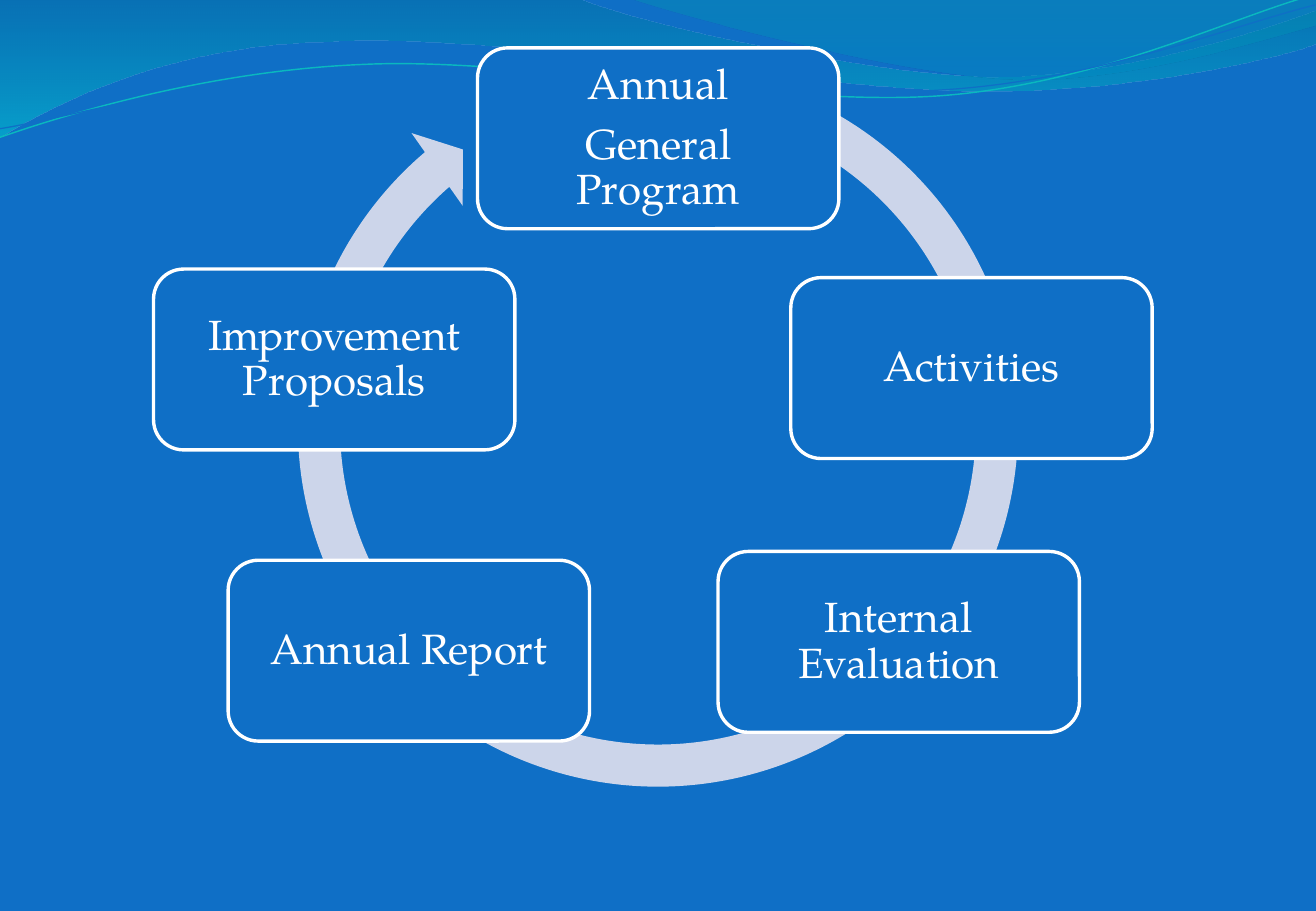
from dataclasses import dataclass

from lxml.etree import SubElement
from pptx import Presentation
from pptx.dml.color import RGBColor
from pptx.enum.shapes import MSO_SHAPE
from pptx.enum.text import MSO_ANCHOR, PP_ALIGN
from pptx.oxml.ns import qn
from pptx.util import Pt

# Content: paragraphs, left, top of each step in the cycle
STEPS = [
    (["Annual", "General Program"], 283, 28.4),
    (["Internal Evaluation"], 425.6, 326.9),
    (["Improvement Proposals"], 91, 159.5),
    (["Activities"], 468.7, 164.6),
    (["Annual Report"], 135.2, 332.1),
]
BOX = (214.2, 107.2)
RING = (162.7, 25.6, 454.6, 454.6)
BEND = (5.5, 330.7, 13760.8, 17395.2, 5.8)  # arrow adjustments, percent

# Waves: start point, then lines (one point) or curves (three points)
# Gradient stops: position, colour, opacity in percent
WAVES = [
    ([[(0, 0)], [(343.4, -0.7)],
      [(370.8, 12.2), (517.7, 45.4), (591.8, 45.4)],
      [(665.3, 45.4), (747.4, 18.7), (779.8, 6.5)],
      [(780.5, 25.9)],
      [(766.8, 31.7), (678.2, 54.7), (581.8, 54)],
      [(485.3, 54), (298.1, 20.2), (200.9, 24.5)],
      [(100.8, 25.9), (36, 59.8), (-0.7, 81.4)]],
     [(0, "0074A1", 45), (1, "00C6CF", 55)]),
    ([[(373.7, -0.7)],
      [(397.4, 7.9), (532.1, 44.6), (599.8, 46.8)],
      [(667.4, 49.7), (750.2, 23), (779.8, 15.1)],
      [(779.8, 0)]],
     [(0, "00A1A9", 30), (0.8, "008BBF", 45)]),
]
CURVES = [
    ([[(0, 81.4)],
      [(37.4, 68.4), (123.1, 41.8), (216, 38.2)],
      [(308.2, 33.8), (462.2, 63.4), (555.8, 56.9)],
      [(649.4, 50.4), (732.2, 9.4), (778.3, -2.9)]], "0AB8BF", 0.85),
    ([[(0, 76.3)],
      [(36.7, 70.6), (127.4, 44.6), (221, 41)],
      [(313.9, 37.4), (465.8, 59.8), (558.7, 53.3)],
      [(652.3, 47.5), (734.4, 13.7), (779.8, 2.9)]], "0F6FC6", 0.75),
]


@dataclass(frozen=True)
class Theme:
    back: str = "0F6FC6"
    ring: str = "CCD5EA"
    ink: str = "FFFFFF"
    font: str = "TeX Gyre Pagella"
    size: float = 25
    edge: float = 2
    pad: float = 7.5
    gap: float = 8.75


THEME = Theme()


def rgb(code):
    return RGBColor.from_string(code)


def paint(shape, fill=None, line=None, width=1):
    shape.shadow.inherit = False
    if fill:
        shape.fill.solid()
        shape.fill.fore_color.rgb = rgb(fill)
    else:
        shape.fill.background()
    if line:
        shape.line.color.rgb = rgb(line)
        shape.line.width = Pt(width)
    else:
        shape.line.fill.background()


def blend(shape, stops):
    shape.fill.gradient()
    shape.fill.gradient_angle = 270
    for stop, (place, code, _) in zip(shape.fill.gradient_stops, stops):
        stop.position = place
        stop.color.rgb = rgb(code)
    tints = shape.element.spPr.iter(qn("a:srgbClr"))
    for tint, (_, _, share) in zip(list(tints), stops):
        SubElement(tint, qn("a:alpha")).set("val", str(share * 1000))


def draw(shapes, parts, close):
    """Draw an outline; each part of three points becomes a cubic curve."""
    dots = [(Pt(x), Pt(y)) for part in parts for x, y in part]
    pen = shapes.build_freeform(*dots[0])
    pen.add_line_segments(dots[1:], close=close)
    shape = pen.convert_to_shape()
    route = next(shape.element.iter(qn("a:path")))
    lines = iter(route.findall(qn("a:lnTo")))
    for part in parts[1:]:
        legs = [next(lines) for _ in part]
        if len(legs) == 3:
            curve = SubElement(route, qn("a:cubicBezTo"))
            legs[0].addprevious(curve)
            for leg in legs:
                curve.append(leg[0])
                route.remove(leg)
    return shape


def write(shape, lines, font, size, color, pad, gap):
    frame = shape.text_frame
    frame.word_wrap = True
    frame.vertical_anchor = MSO_ANCHOR.MIDDLE
    frame.margin_left = frame.margin_right = Pt(pad)
    frame.margin_top = frame.margin_bottom = Pt(pad)
    for n, line in enumerate(lines):
        para = frame.add_paragraph() if n else frame.paragraphs[0]
        para.alignment = PP_ALIGN.CENTER
        para.line_spacing = 0.9
        para.space_after = Pt(gap)
        run = para.add_run()
        run.text = line
        run.font.name = font
        run.font.size = Pt(size)
        run.font.color.rgb = rgb(color)


def main():
    deck = Presentation()
    deck.slide_width, deck.slide_height = Pt(780), Pt(540)
    slide = deck.slides.add_slide(deck.slide_layouts[6])
    slide.background.fill.solid()
    slide.background.fill.fore_color.rgb = rgb(THEME.back)
    shapes = slide.shapes

    # Waves along the top
    for parts, stops in WAVES:
        wave = draw(shapes, parts, True)
        paint(wave)
        blend(wave, stops)
    for parts, color, width in CURVES:
        paint(draw(shapes, parts, False), line=color, width=width)

    # Ring arrow
    ring = shapes.add_shape(MSO_SHAPE.CIRCULAR_ARROW, *map(Pt, RING))
    for n, bend in enumerate(BEND):
        ring.adjustments[n] = bend / 100
    paint(ring, THEME.ring)

    # Steps of the cycle
    for lines, left, top in STEPS:
        box = shapes.add_shape(MSO_SHAPE.ROUNDED_RECTANGLE,
                               *map(Pt, (left, top, *BOX)))
        paint(box, THEME.back, THEME.ink, THEME.edge)
        write(box, lines, font=THEME.font, size=THEME.size,
              color=THEME.ink, pad=THEME.pad, gap=THEME.gap)

    deck.save("out.pptx")


if __name__ == "__main__":
    main()
